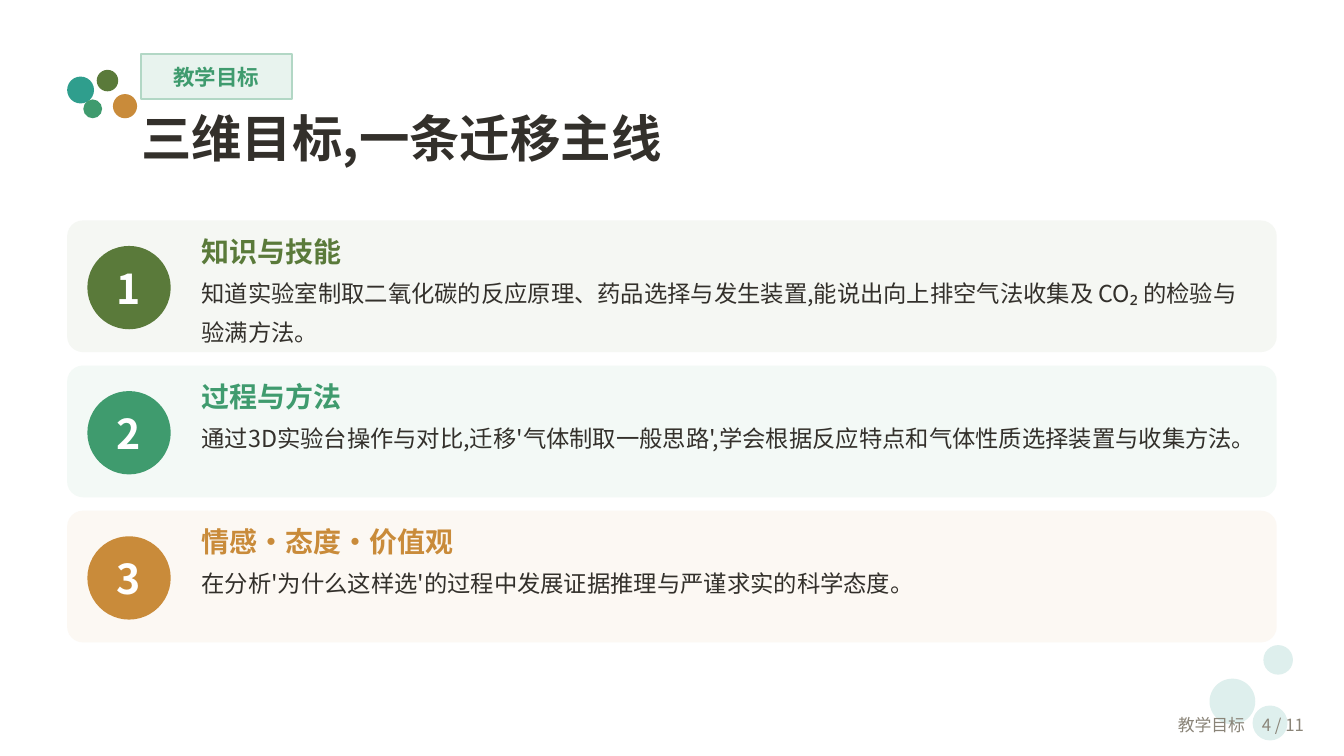
from lxml.etree import SubElement
from pptx import Presentation
from pptx.dml.color import RGBColor
from pptx.enum.shapes import MSO_SHAPE
from pptx.enum.text import MSO_ANCHOR, PP_ALIGN
from pptx.oxml.ns import qn
from pptx.util import Emu, Pt

PX = 9144
SLIDE_W = 1000
FONT = "Noto Sans CJK SC"
INK, GREY, WHITE = "33302B", "8A8478", "FFFFFF"
OLIVE, GREEN, TEAL, AMBER, MIST = "5A7A3A", "3F9B6E", "2F9E8D", "C98B3A", "DEEFED"

SECTION = "教学目标"
TITLE = "三维目标,一条迁移主线"
PAGE = "教学目标　4 / 11"
GOALS = [
    ("知识与技能", OLIVE, "F5F7F3",
     "知道实验室制取二氧化碳的反应原理、药品选择与发生装置,能说出向上排空气法收集及 CO₂ 的检验与验满方法。"),
    ("过程与方法", GREEN, "F3F9F6",
     "通过3D实验台操作与对比,迁移'气体制取一般思路',学会根据反应特点和气体性质选择装置与收集方法。"),
    ("情感·态度·价值观", AMBER, "FCF8F3",
     "在分析'为什么这样选'的过程中发展证据推理与严谨求实的科学态度。"),
]
DOTS = [
    (900, 505, 34, MIST), (940, 480, 22, MIST), (932, 525, 26, MIST),
    (50, 57, 20, TEAL), (72, 52, 16, OLIVE), (62, 74, 14, GREEN), (84, 70, 18, AMBER),
]
CARD_TOP, CARD_H, CARD_STEP, BADGE = 164, 98, 108, 62


def rgb(value):
    return RGBColor.from_string(value)


def box(*lengths):
    return [Emu(n * PX) for n in lengths]


def add_shape(s, kind, at, fill, line=None):
    sp = s.shapes.add_shape(kind, *box(*at))
    sp.shadow.inherit = False
    sp.fill.solid()
    sp.fill.fore_color.rgb = rgb(fill)
    if line:
        sp.line.color.rgb = rgb(line)
        sp.line.width = Pt(1)
    else:
        sp.line.fill.background()
    return sp


def write(sp, lines, align=PP_ALIGN.LEFT, anchor=MSO_ANCHOR.TOP, spacing=None, inset=(0, 0)):
    tf = sp.text_frame
    tf.word_wrap = True
    tf.vertical_anchor = anchor
    tf.margin_left = tf.margin_right = Emu(inset[0] * PX)
    tf.margin_top = tf.margin_bottom = Emu(inset[1] * PX)
    for i, (text, size, color, bold) in enumerate(lines):
        p = tf.add_paragraph() if i else tf.paragraphs[0]
        p.text = text
        p.alignment = align
        if spacing:
            p.line_spacing = Pt(spacing)
        font = p.font
        font.name, font.size, font.bold = FONT, Pt(size), bold
        font.color.rgb = rgb(color)
        SubElement(p._p.pPr.find(qn("a:defRPr")), qn("a:ea"), typeface=FONT)


def add_text(s, at, lines, **options):
    write(s.shapes.add_textbox(*box(*at)), lines, **options)


def add_goal(s, i, goal):
    heading, color, tint, body = goal
    top = CARD_TOP + i * CARD_STEP
    card = add_shape(s, MSO_SHAPE.ROUNDED_RECTANGLE, (50, top, 900, CARD_H), tint)
    card.adjustments[0] = 0.12
    at = (65, top + 19, BADGE, BADGE)
    add_shape(s, MSO_SHAPE.OVAL, at, color)
    add_text(s, at, [(str(i + 1), 22, WHITE, True)],
             align=PP_ALIGN.CENTER, anchor=MSO_ANCHOR.MIDDLE)
    add_text(s, (150, top + 6, 785, 95),
             [(heading, 15, color, True), (body, 12.5, INK, False)], spacing=21)


def main():
    """Build the teaching goals slide."""
    prs = Presentation()
    prs.slide_width = Emu(SLIDE_W * PX)
    prs.slide_height = Emu(SLIDE_W * PX * 9 // 16)
    s = prs.slides.add_slide(prs.slide_layouts[6])
    for x, y, size, color in DOTS:
        add_shape(s, MSO_SHAPE.OVAL, (x, y, size, size), color)
    tag = add_shape(s, MSO_SHAPE.RECTANGLE, (105, 40, 112, 34), "E8F3EE", "B2D7C5")
    write(tag, [(SECTION, 11.5, GREEN, True)], align=PP_ALIGN.CENTER, anchor=MSO_ANCHOR.MIDDLE)
    add_text(s, (105, 80, 840, 55), [(TITLE, 27, INK, True)])
    for i, goal in enumerate(GOALS):
        add_goal(s, i, goal)
    add_text(s, (800, 524, 180, 30), [(PAGE, 9, GREY, False)],
             align=PP_ALIGN.RIGHT, anchor=MSO_ANCHOR.MIDDLE, inset=(10, 5))
    prs.save("out.pptx")


if __name__ == "__main__":
    main()
